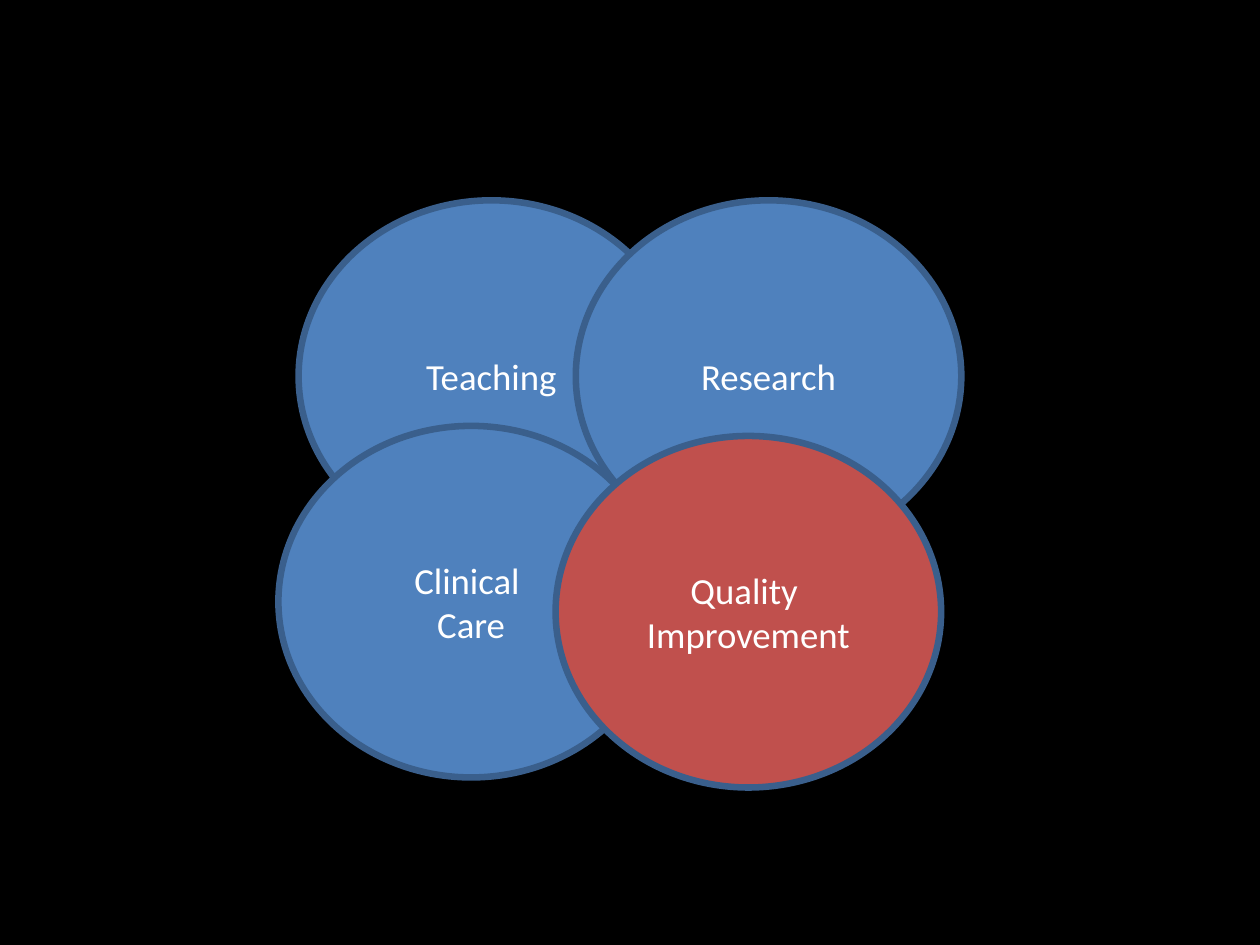
from dataclasses import dataclass

from pptx import Presentation
from pptx.dml.color import RGBColor
from pptx.enum import shapes, text
from pptx.util import Inches, Pt


@dataclass(frozen=True)
class Theme:
    """Colours and type sizes of the slide."""
    background: RGBColor = RGBColor(0x00, 0x00, 0x00)
    pillar: RGBColor = RGBColor(0x4F, 0x81, 0xBD)
    highlight: RGBColor = RGBColor(0xC0, 0x50, 0x4D)
    outline: RGBColor = RGBColor(0x3A, 0x5F, 0x8C)
    label: RGBColor = RGBColor(0xFF, 0xFF, 0xFF)
    font: str = "Calibri"
    label_size: float = 21
    outline_width: float = 3.75


THEME = Theme()
CIRCLE_WIDTH, CIRCLE_HEIGHT = 3.06, 2.79
PILLARS = (
    (2.37, 1.59, ("Teaching",), THEME.pillar),
    (4.57, 1.59, ("Research",), THEME.pillar),
    (2.21, 3.38, ("Clinical ", "Care"), THEME.pillar),
    (4.41, 3.46, ("Quality ", "Improvement"), THEME.highlight),
)


def write_label(frame, lines):
    """Write centred lines, one paragraph each."""
    frame.word_wrap = True
    frame.vertical_anchor = text.MSO_ANCHOR.MIDDLE
    frame.margin_left = frame.margin_right = Inches(0.07)
    frame.margin_top = frame.margin_bottom = Inches(0.04)
    for index, line in enumerate(lines):
        paragraph = frame.add_paragraph() if index else frame.paragraphs[0]
        paragraph.alignment = text.PP_ALIGN.CENTER
        run = paragraph.add_run()
        run.text = line
        run.font.name = THEME.font
        run.font.size = Pt(THEME.label_size)
        run.font.color.rgb = THEME.label


def add_circle(slide, left, top, lines, colour):
    """Add one labelled circle of the overlapping group."""
    circle = slide.shapes.add_shape(
        shapes.MSO_SHAPE.OVAL, Inches(left), Inches(top),
        Inches(CIRCLE_WIDTH), Inches(CIRCLE_HEIGHT))
    circle.shadow.inherit = False
    circle.fill.solid()
    circle.fill.fore_color.rgb = colour
    circle.line.color.rgb = THEME.outline
    circle.line.width = Pt(THEME.outline_width)
    write_label(circle.text_frame, lines)


def main():
    """Build the slide and save it."""
    deck = Presentation()
    deck.slide_width, deck.slide_height = Inches(10), Inches(7.5)
    slide = deck.slides.add_slide(deck.slide_layouts[6])
    slide.background.fill.solid()
    slide.background.fill.fore_color.rgb = THEME.background
    for left, top, lines, colour in PILLARS:
        add_circle(slide, left, top, lines, colour)
    deck.save("out.pptx")


if __name__ == "__main__":
    main()
